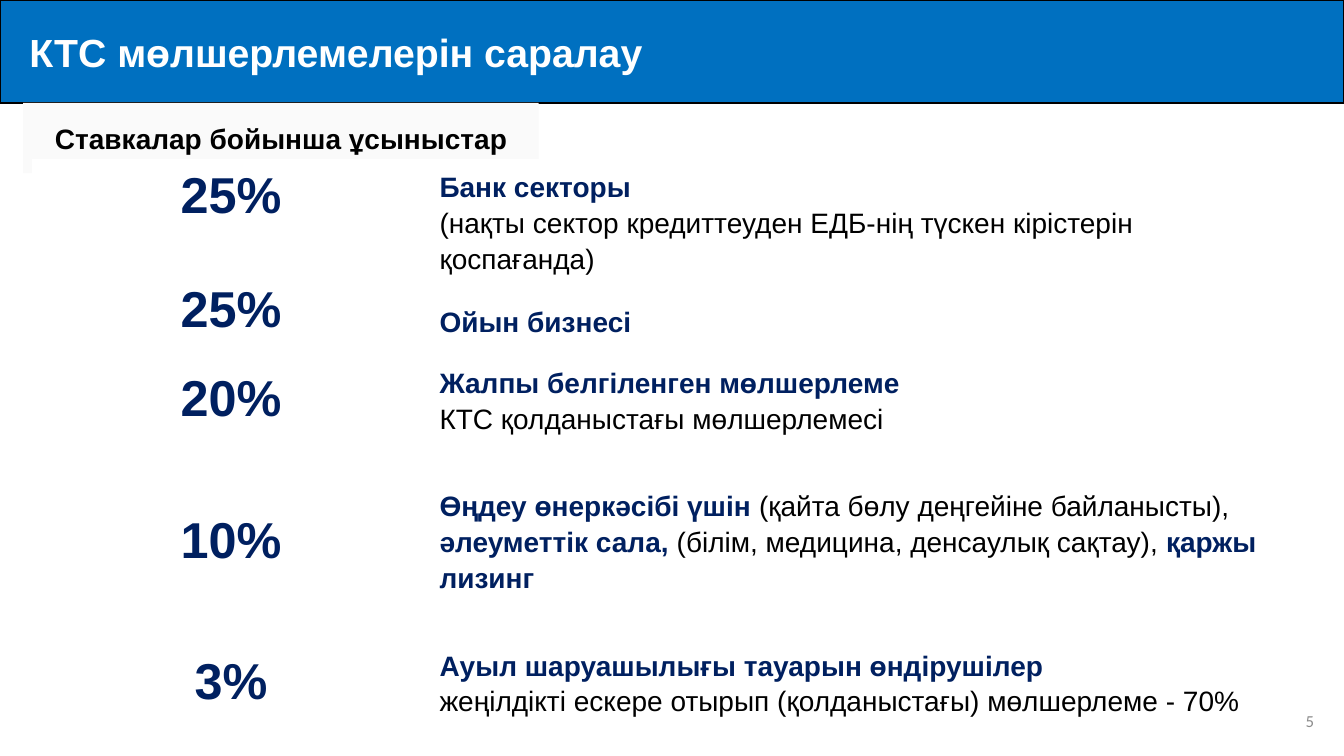
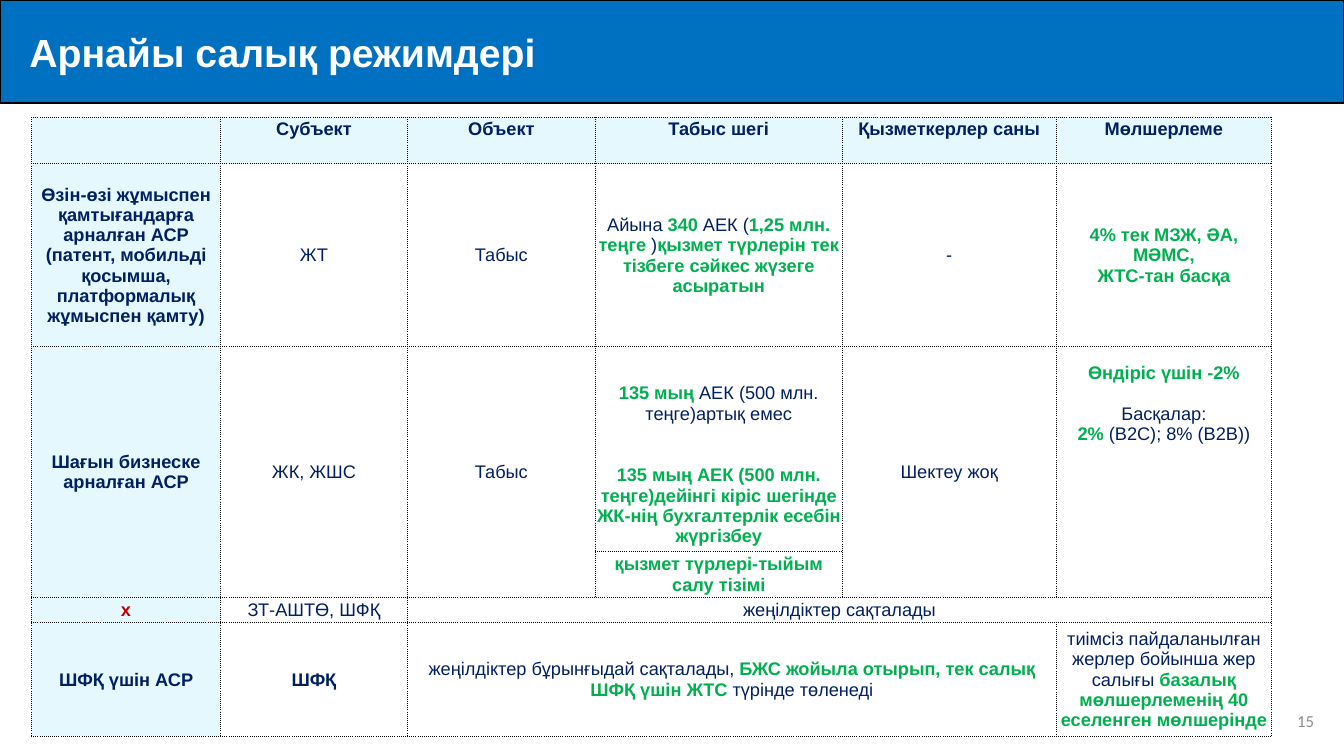
from pptx import Presentation
from pptx.dml.color import RGBColor
from pptx.enum.shapes import MSO_SHAPE as Shape
from pptx.enum.text import MSO_ANCHOR as Anchor, PP_ALIGN as Align
from pptx.oxml import parse_xml
from pptx.oxml.ns import nsdecls
from pptx.util import Pt

PX = 9525
WIDE, HIGH = 1280, 720
BLUE, NAVY, GREEN = "0070C0", "002060", "00B050"
RED, BLACK, WHITE = "C00000", "000000", "FFFFFF"
PALE, MIST, GREY = "E4F8FD", "FAFAFA", "8C8C8C"
KINDS = {
    "b": (NAVY, True),
    "n": (NAVY, False),
    "g": (GREEN, True),
    "r": (RED, True),
    "k": (BLACK, False),
    "t": (BLACK, True),
    "w": (WHITE, True),
    "p": (GREY, False),
}

RATES = [
    (["b25%", "^b25%"],
     ["bБанк секторы",
      "k(нақты сектор кредиттеуден ЕДБ-нің түскен кірістерін\nқоспағанда)",
      "^bОйын бизнесі"]),
    (["b20%"],
     ["bЖалпы белгіленген мөлшерлеме", "kКТС қолданыстағы мөлшерлемесі"]),
    (["b10%"],
     ["bӨңдеу өнеркәсібі үшін |k(қайта бөлу деңгейіне байланысты), "
      "|bәлеуметтік сала, |k(білім, медицина, денсаулық сақтау), "
      "|bқаржы лизинг"]),
    (["b3%"],
     ["bАуыл шаруашылығы тауарын өндірушілер",
      "kжеңілдікті ескере отырып (қолданыстағы) мөлшерлеме - 70%"]),
]

MODES = [
    ([], ["bСубъект"], ["bОбъект"], ["bТабыс шегі"], ["bҚызметкерлер саны"],
     ["bМөлшерлеме"]),
    (["bӨзін-өзі жұмыспен қамтығандарға арналған АСР "
      "(патент, мобильді қосымша, платформалық жұмыспен қамту)"],
     ["nЖТ"], ["nТабыс"],
     ["nАйына|g 340 |nАЕК (|g1,25 млн. теңге |n)"
      "|gқызмет түрлерін тек тізбеге сәйкес жүзеге асыратын"],
     ["n-"],
     ["g4% тек МЗЖ, ӘА, МӘМС,", "gЖТС-тан басқа"]),
    (["bШағын бизнеске арналған АСР"], ["nЖК, ЖШС"], ["nТабыс"],
     ["g135 мың |nАЕК (500 млн. теңге)артық емес"],
     ["nШектеу жоқ"],
     ["gӨндіріс үшін -2%", "^nБасқалар:", "g2%|n (В2С); 8% (В2В))"]),
    ([], [], [],
     ["g135 мың АЕК (500 млн. теңге)дейінгі кіріс шегінде "
      "ЖК-нің бухгалтерлік есебін жүргізбеу"],
     [], []),
    ([], [], [], ["gқызмет түрлері-тыйым салу тізімі"], [], []),
    (["rх"], ["nЗТ-АШТӨ, ШФҚ"], ["nжеңілдіктер сақталады"], [], [], []),
    (["bШФҚ үшін АСР"], ["bШФҚ"],
     ["nжеңілдіктер бұрынғыдай сақталады, "
      "|gБЖС жойыла отырып, тек салық ШФҚ үшін ЖТС |nтүрінде төленеді"],
     [], [],
     ["nтиімсіз пайдаланылған жерлер бойынша жер салығы "
      "|gбазалық мөлшерлеменің 40 еселенген мөлшерінде"]),
]
SPANS = [
    (2, 0, 4, 0), (2, 1, 4, 1), (2, 2, 4, 2), (2, 4, 4, 4),
    (3, 5, 4, 5), (5, 2, 5, 5), (6, 2, 6, 4),
]
SIDES = {(2, 3): "LRT", (2, 5): "LRT", (3, 3): "LRB", (3, 5): "LRB",
         (4, 5): "LRB"}


def tint(hue):
    """Turn a hex string into a colour."""
    return RGBColor.from_string(hue)


def emu(*nums):
    """Scale px to EMU."""
    return [num * PX for num in nums]


def paint(item, hue):
    """Fill a shape or cell with one colour."""
    item.fill.solid()
    item.fill.fore_color.rgb = tint(hue)


def put(frame, lines, size, align=Align.LEFT, lead=1.0, face="Arial"):
    """Write lines of runs; ^ opens a gap, | parts runs, a letter styles."""
    for num, line in enumerate(lines):
        par = frame.add_paragraph() if num else frame.paragraphs[0]
        par.alignment = align
        if line.startswith("^"):
            par.space_before = Pt(round(size * 1.15))
        else:
            par.line_spacing = lead
        for part in line.lstrip("^").split("|"):
            hue, bold = KINDS[part[0]]
            for row, text in enumerate(part[1:].split("\n")):
                if row:
                    par.add_line_break()
                run = par.add_run()
                run.text = text
                run.font.name, run.font.size = face, Pt(size)
                run.font.bold, run.font.color.rgb = bold, tint(hue)


def box(slide, place, hue, line, size, align, edge=None, pad=10):
    """Draw a filled rectangle with one line of text."""
    rect = slide.shapes.add_shape(Shape.RECTANGLE, *emu(*place))
    rect.shadow.inherit = False
    paint(rect, hue)
    if edge:
        rect.line.color.rgb, rect.line.width = tint(edge), Pt(1)
    else:
        rect.line.fill.background()
    frame = rect.text_frame
    frame.word_wrap, frame.vertical_anchor = True, Anchor.MIDDLE
    frame.margin_left = pad * PX
    put(frame, [line], size, align)


def page(deck, title):
    """Add a blank slide with its title band."""
    slide = deck.slides.add_slide(deck.slide_layouts[6])
    box(slide, (0, 0, WIDE, 98), BLUE, "w" + title, 28, Align.LEFT, BLACK, 28)
    return slide


def number(slide, num):
    """Add the page number."""
    frame = slide.shapes.add_textbox(*emu(973, 667, 288, 38)).text_frame
    frame.word_wrap, frame.vertical_anchor = True, Anchor.MIDDLE
    put(frame, [f"p{num}"], 12, Align.RIGHT, face="Calibri")


def grid(slide, left, top, cols, rows):
    """Add a plain table with set column and row sizes."""
    place = emu(left, top, sum(cols), sum(rows))
    table = slide.shapes.add_table(len(rows), len(cols), *place).table
    table.first_row = table.horz_banding = False
    for col, width in zip(table.columns, cols):
        col.width = width * PX
    for row, height in zip(table.rows, rows):
        row.height = height * PX
    return table


def rule(cell, sides):
    """Give a cell dotted borders."""
    for side in sides:
        cell._tc.get_or_add_tcPr().append(parse_xml(
            f'<a:ln{side} {nsdecls("a")} w="6350"><a:solidFill>'
            f'<a:srgbClr val="{BLACK}"/></a:solidFill>'
            f'<a:prstDash val="dot"/></a:ln{side}>'))


def rates(slide):
    """Fill the table of tax rates."""
    table = grid(slide, 31, 152, [378, 824], [178, 101, 168, 101])
    looks = [(36, Align.CENTER, 1.0), (20, Align.LEFT, 1.15)]
    for row, texts in enumerate(RATES):
        for col, (lines, look) in enumerate(zip(texts, looks)):
            cell = table.cell(row, col)
            paint(cell, WHITE)
            cell.vertical_anchor = Anchor.MIDDLE
            put(cell.text_frame, lines, *look)


def modes(slide):
    """Fill the table of special tax modes."""
    table = grid(slide, 30, 112, [180, 178, 179, 235, 204, 205],
                 [44, 174, 108, 87, 44, 24, 108])
    for top, left, end, right in SPANS:
        table.cell(top, left).merge(table.cell(end, right))
    for row, texts in enumerate(MODES):
        for col, lines in enumerate(texts):
            cell = table.cell(row, col)
            rule(cell, SIDES.get((row, col), "LRTB"))
            paint(cell, WHITE if row and col else PALE)
            cell.vertical_anchor = Anchor.MIDDLE if row else Anchor.TOP
            cell.margin_left = cell.margin_right = cell.margin_top = PX
            cell.margin_bottom = 0
            put(cell.text_frame, lines, 13, Align.CENTER)


def main():
    """Build and save the deck."""
    deck = Presentation()
    deck.slide_width, deck.slide_height = emu(WIDE, HIGH)

    slide = page(deck, "КТС мөлшерлемелерін саралау")
    box(slide, (22, 98, 491, 67), MIST, "tСтавкалар бойынша ұсыныстар", 20,
        Align.CENTER)
    rates(slide)
    number(slide, 5)

    slide = page(deck, "Арнайы салық режимдері")
    modes(slide)
    number(slide, 15)

    deck.save("out.pptx")


if __name__ == "__main__":
    main()
